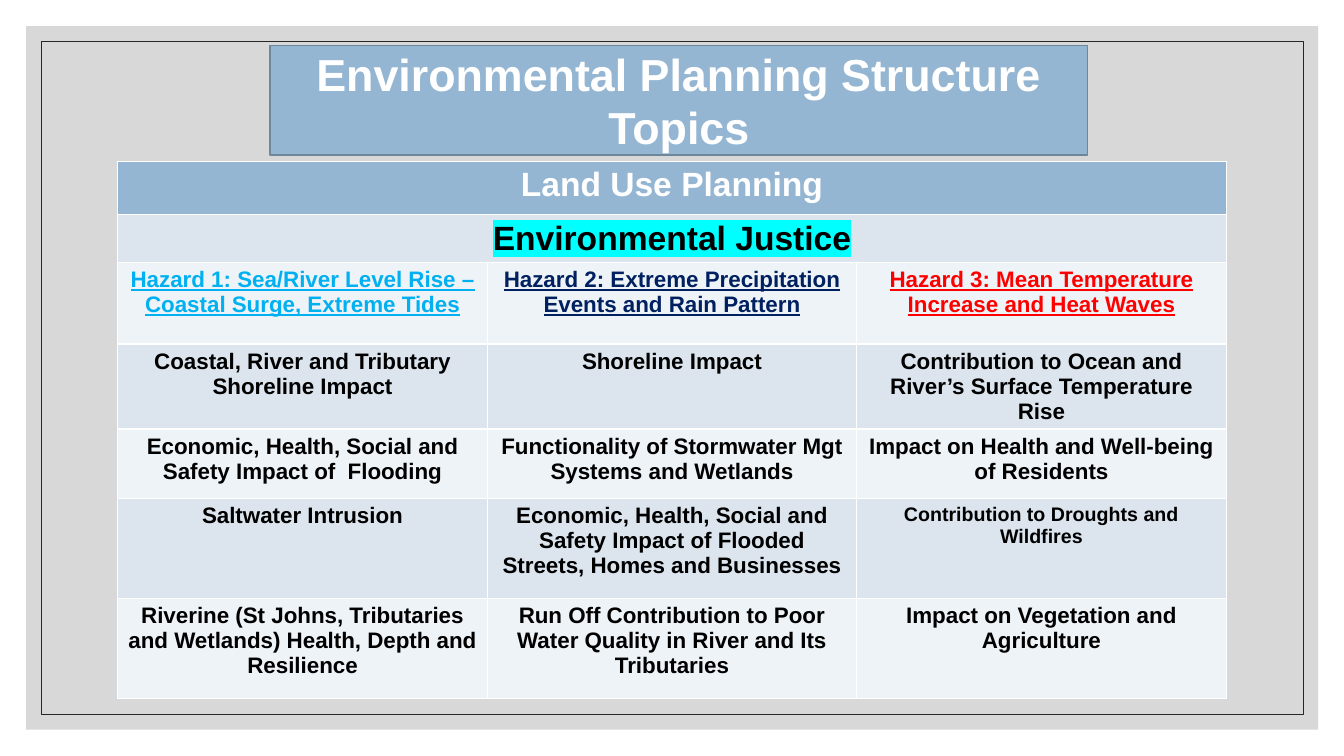
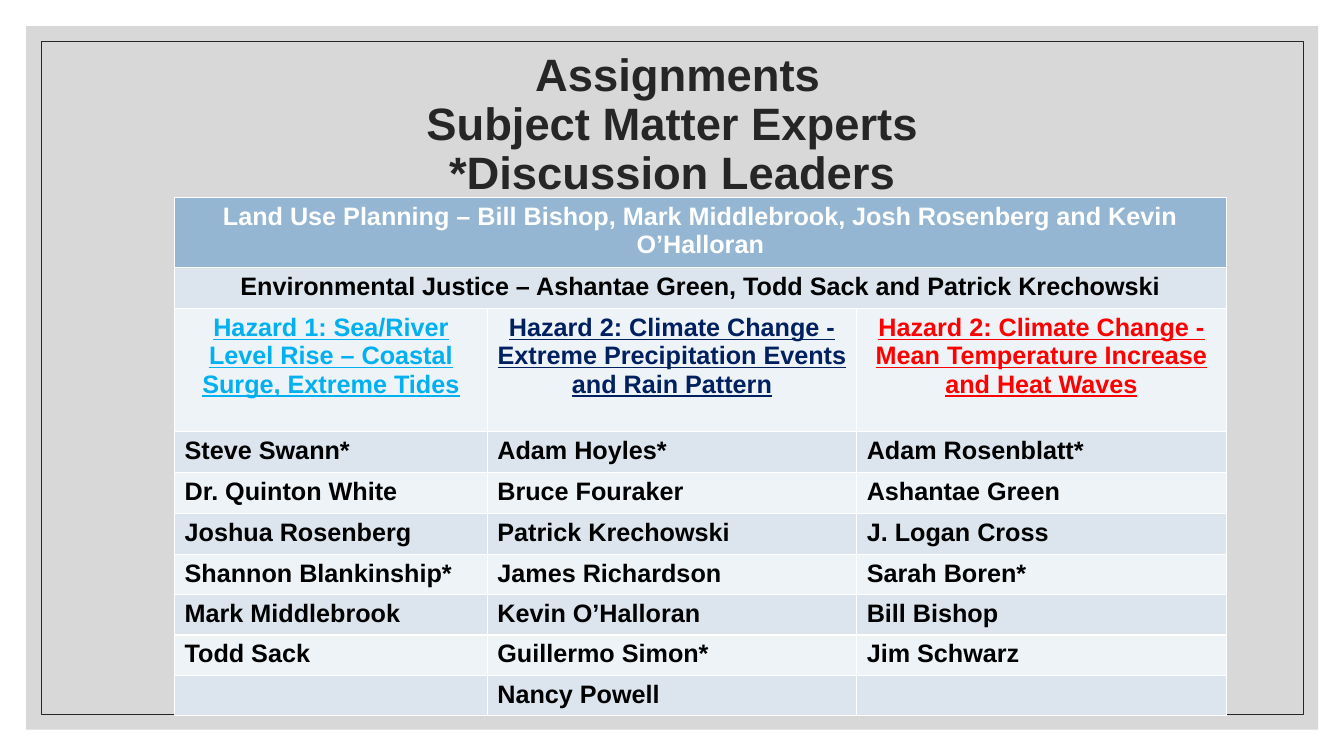
"""Two slides on environmental planning topics and their assigned experts."""
from lxml.etree import SubElement
from pptx import Presentation
from pptx.dml.color import RGBColor
from pptx.enum.shapes import MSO_SHAPE
from pptx.enum.text import MSO_ANCHOR, PP_ALIGN
from pptx.oxml.ns import qn
from pptx.util import Cm, Pt

FONT = "Arial"
WHITE, BLACK, DARK = "FFFFFF", "000000", "262626"
GREY, BLUE, BLUE_EDGE = "BFBFBF", "94B6D2", "6D879B"
BANDS = ("DCE5EE", "EEF3F7")
HAZARD_COLORS = ("00B0F0", "002060", "FF0000")
HIGHLIGHT = "00FFFF"
HAZARD_ROW = 2

TOPICS = {
    "at": (2.97, 4.06),
    "cols": (9.31, 9.31, 9.31),
    "heights": (1.35, 1.2, 2.06, 2.14, 1.75, 2.52, 2.52),
    "banner_size": 24,
    "size": 16,
    "small": {(5, 2): 14},
    "highlight": True,
    "body_align": PP_ALIGN.CENTER,
    "rows": [
        ("Land Use Planning",),
        ("Environmental Justice",),
        ("Hazard 1: Sea/River Level Rise – Coastal Surge, Extreme Tides",
         "Hazard 2: Extreme Precipitation Events and Rain Pattern",
         "Hazard 3: Mean Temperature Increase and Heat Waves"),
        ("Coastal, River and Tributary Shoreline Impact",
         "Shoreline Impact",
         "Contribution to Ocean and River’s Surface Temperature Rise"),
        ("Economic, Health, Social and Safety Impact of  Flooding",
         "Functionality of Stormwater Mgt Systems and Wetlands",
         "Impact on Health and Well-being of Residents"),
        ("Saltwater Intrusion",
         "Economic, Health, Social and Safety Impact of Flooded Streets, Homes and Businesses",
         "Contribution to Droughts and Wildfires"),
        ("Riverine (St Johns, Tributaries and Wetlands) Health, Depth and Resilience",
         "Run Off Contribution to Poor Water Quality in River and Its Tributaries",
         "Impact on Vegetation and Agriculture"),
    ],
}

EXPERTS = {
    "at": (4.4, 4.97),
    "cols": (7.88, 9.31, 9.31),
    "heights": (1.68, 1.03, 3.1) + (1.03,) * 3 + (0.97,) * 4,
    "banner_size": 18,
    "size": 18,
    "small": {},
    "highlight": False,
    "body_align": PP_ALIGN.LEFT,
    "rows": [
        ("Land Use Planning – Bill Bishop, Mark Middlebrook, Josh Rosenberg and Kevin O’Halloran",),
        ("Environmental Justice – Ashantae Green, Todd Sack and Patrick Krechowski",),
        ("Hazard 1: Sea/River Level Rise – Coastal Surge, Extreme Tides",
         "Hazard 2: Climate Change - Extreme Precipitation Events and Rain Pattern",
         "Hazard 2: Climate Change - Mean Temperature Increase and Heat Waves"),
        ("Steve Swann*", "Adam Hoyles*", "Adam Rosenblatt*"),
        ("Dr. Quinton White", "Bruce Fouraker", "Ashantae Green"),
        ("Joshua Rosenberg", "Patrick Krechowski", "J. Logan Cross"),
        ("Shannon Blankinship*", "James Richardson", "Sarah Boren*"),
        ("Mark Middlebrook", "Kevin O’Halloran", "Bill Bishop"),
        ("Todd Sack", "Guillermo Simon*", "Jim Schwarz"),
        ("", "Nancy Powell", ""),
    ],
}


def rgb(color):
    """Turn a hex string into a colour."""
    return RGBColor.from_string(color)


def style(p, size, color, align=PP_ALIGN.CENTER, underline=None):
    """Set the bold font and alignment of a paragraph."""
    p.alignment = align
    p.font.name, p.font.size, p.font.bold = FONT, Pt(size), True
    p.font.color.rgb = rgb(color)
    p.font.underline = underline


def add_rect(s, box, fill=None, line=None, width=1, opacity=None):
    """Add a plain rectangle."""
    sp = s.shapes.add_shape(MSO_SHAPE.RECTANGLE, *map(Cm, box))
    sp.shadow.inherit = False
    if fill:
        sp.fill.solid()
        sp.fill.fore_color.rgb = rgb(fill)
    else:
        sp.fill.background()
    if line:
        sp.line.color.rgb = rgb(line)
        sp.line.width = Pt(width)
    else:
        sp.line.fill.background()
    if opacity:
        color = sp.fill._xPr.find(".//" + qn("a:srgbClr"))
        SubElement(color, qn("a:alpha"), val=str(opacity * 1000))
    return sp


def add_framed_slide(prs):
    """Add a blank slide with the shared grey panel and thin frame."""
    s = prs.slides.add_slide(prs.slide_layouts[6])
    add_rect(s, (0.66, 0.66, 32.56, 17.73), fill=GREY, opacity=60)
    add_rect(s, (1.04, 1.04, 31.8, 16.97), line=DARK, width=0.5)
    return s


def set_title(sp, text, size, color):
    """Write a centred slide title into a shape."""
    tf = sp.text_frame
    tf.word_wrap = True
    tf.vertical_anchor = MSO_ANCHOR.MIDDLE
    p = tf.paragraphs[0]
    p.text = text
    style(p, size, color)
    return p


def highlight(p, color):
    """Mark the text of a paragraph."""
    for r in p.runs:
        mark = SubElement(r._r.get_or_add_rPr(), qn("a:highlight"))
        SubElement(mark, qn("a:srgbClr"), val=color)


def add_plan_table(s, plan):
    """Add two banner rows, a hazard row and body rows."""
    rows, cols, heights = plan["rows"], plan["cols"], plan["heights"]
    box = (*plan["at"], sum(cols), sum(heights))
    table = s.shapes.add_table(len(rows), len(cols), *map(Cm, box)).table
    for column, width in zip(table.columns, cols):
        column.width = Cm(width)
    for i, (texts, height) in enumerate(zip(rows, heights)):
        table.rows[i].height = Cm(height)
        if len(texts) == 1:
            table.cell(i, 0).merge(table.cell(i, len(cols) - 1))
        for j, text in enumerate(texts):
            cell = table.cell(i, j)
            cell.fill.solid()
            cell.fill.fore_color.rgb = rgb(BANDS[(i + 1) % 2] if i else BLUE)
            p = cell.text_frame.paragraphs[0]
            p.text = text
            if i < HAZARD_ROW:
                style(p, plan["banner_size"], BLACK if i else WHITE)
            elif i == HAZARD_ROW:
                style(p, plan["size"], HAZARD_COLORS[j], underline=True)
            else:
                size = plan["small"].get((i, j), plan["size"])
                style(p, size, BLACK, plan["body_align"])
    if plan["highlight"]:
        highlight(table.cell(1, 0).text_frame.paragraphs[0], HIGHLIGHT)


def main():
    """Build and save the slides."""
    prs = Presentation()
    prs.slide_width, prs.slide_height = Cm(33.87), Cm(19.05)

    s = add_framed_slide(prs)
    add_plan_table(s, TOPICS)
    sp = add_rect(s, (6.81, 1.14, 20.6, 2.77), fill=BLUE, line=BLUE_EDGE)
    set_title(sp, "Environmental Planning Structure Topics", 32, WHITE)

    s = add_framed_slide(prs)
    sp = s.shapes.add_textbox(*map(Cm, (2.97, 1.27, 27.94, 3.81)))
    p = set_title(sp, " Assignments\vSubject Matter Experts\v*Discussion Leaders", 32.4, DARK)
    p.line_spacing = 0.9
    add_plan_table(s, EXPERTS)

    prs.save("out.pptx")


if __name__ == "__main__":
    main()
